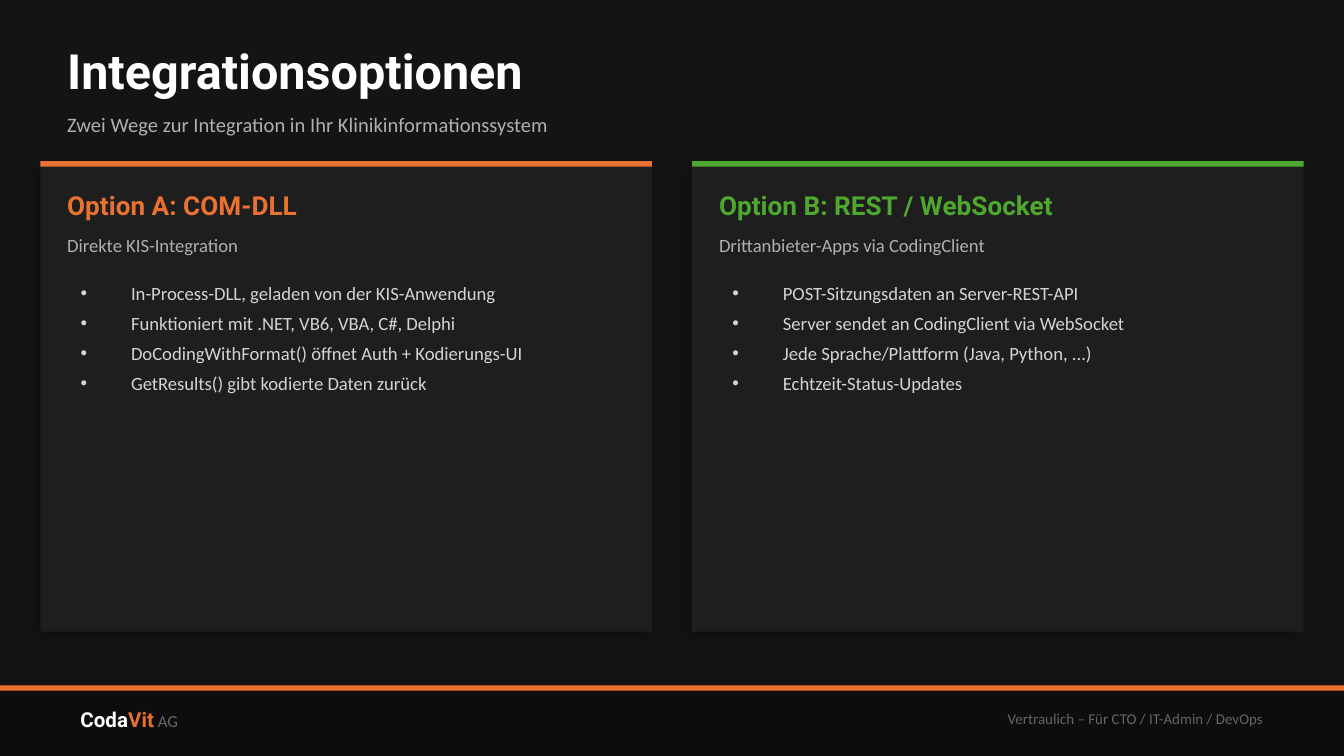
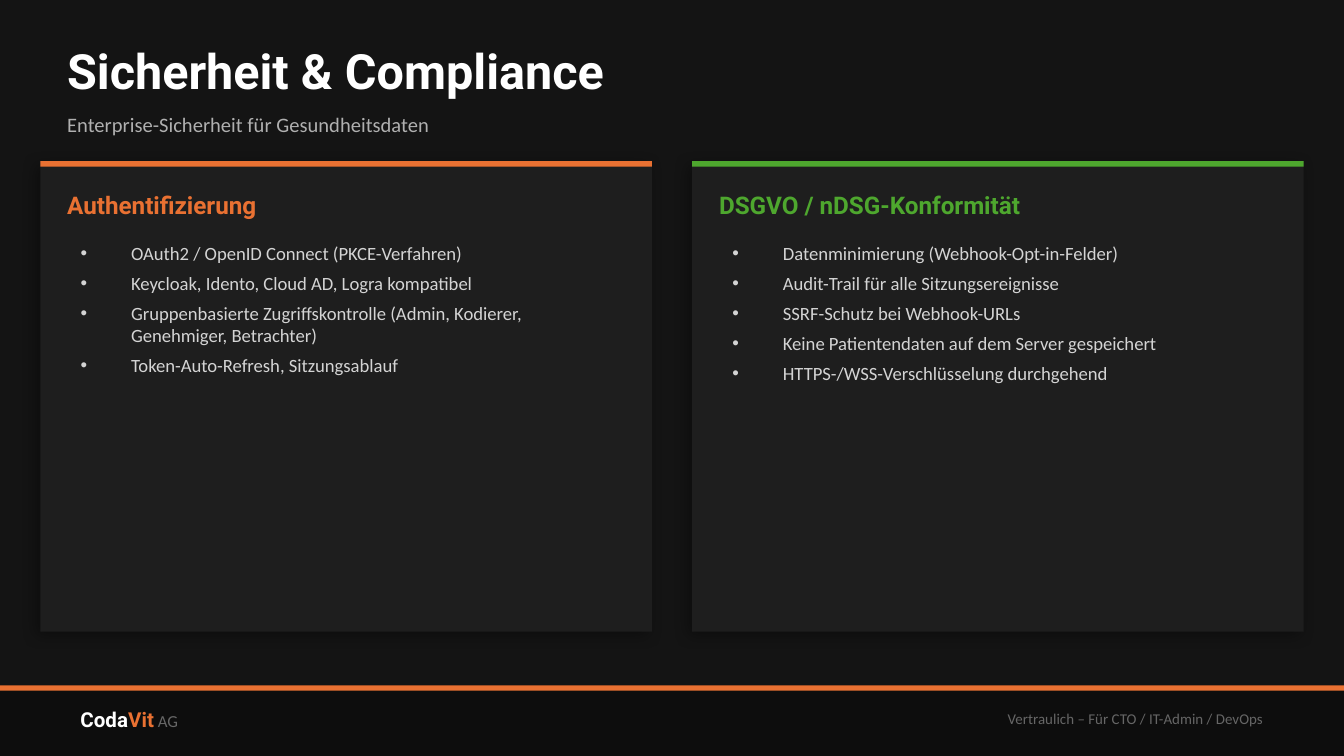
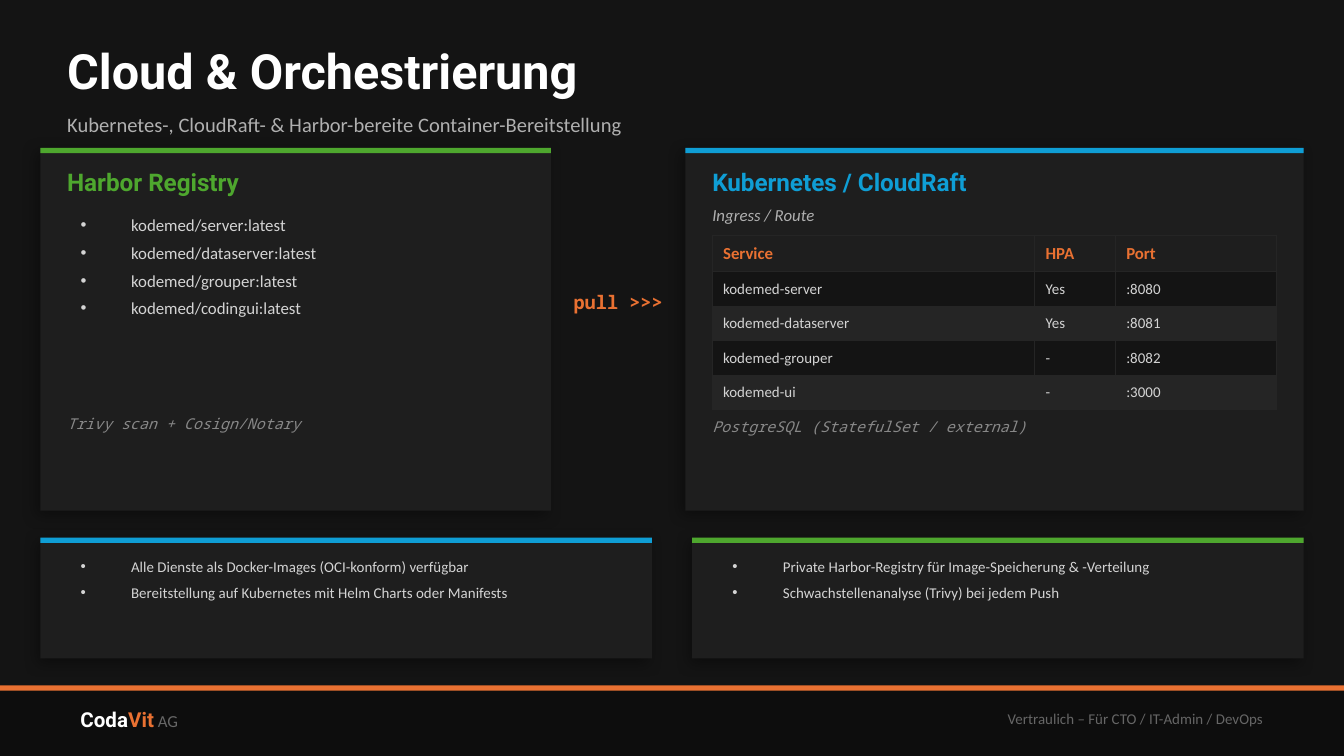
"""Build three dark slides on integration, security and cloud orchestration."""
import dataclasses

import lxml.etree
import pptx
import pptx.dml.color
import pptx.enum.shapes
import pptx.enum.text
import pptx.oxml.ns
import pptx.util

Inches = pptx.util.Inches
Pt = pptx.util.Pt
ALIGN = pptx.enum.text.PP_ALIGN
ANCHOR = pptx.enum.text.MSO_ANCHOR


@dataclasses.dataclass(frozen=True)
class Style:
    size: float
    color: str
    font: str = "Calibri"
    bold: bool = False
    italic: bool = False


class Theme:
    background, footer, card, stripe = "141414", "0D0D0D", "1E1E1E", "252525"
    orange, green, blue = "E97132", "4EA72E", "0F9ED5"
    white, text, muted, faint = "FFFFFF", "D4D4D4", "B0B0B0", "666666"
    title = Style(26, white, "Roboto", bold=True)
    subtitle = Style(11, muted)
    option = Style(14, white, "Roboto", bold=True)
    heading = Style(13, white, "Roboto", bold=True)
    note = Style(10, muted)
    small_note = Style(9, muted, italic=True)
    caption = Style(8, "888888", "Noto Sans Mono", italic=True)
    arrow = Style(10, orange, "Noto Sans Mono", bold=True)
    table_head = Style(9, orange, bold=True)
    table_body = Style(8, text)
    confidential = Style(8, faint)
    brand = Style(11, white, "Roboto", bold=True)
    brand_accent = Style(11, orange, "Roboto", bold=True)
    brand_suffix = Style(9, faint)


WIDTH = 10
HEIGHT = WIDTH * 9 / 16
MARGIN, GAP, PADDING, ACCENT_HEIGHT = 0.3, 0.3, 0.2, 0.04
HALF = (WIDTH - 2 * MARGIN - GAP) / 2
RIGHT = MARGIN + HALF + GAP
FOOTER_TOP = 5.1
INDENT = Pt(27)

BRAND = [("Coda", Theme.brand), ("Vit", Theme.brand_accent), (" AG", Theme.brand_suffix)]
CONFIDENTIAL = "Vertraulich – Für CTO / IT-Admin / DevOps"

SERVICES = [
    ("Service", "HPA", "Port"),
    ("kodemed-server", "Yes", ":8080"),
    ("kodemed-dataserver", "Yes", ":8081"),
    ("kodemed-grouper", "-", ":8082"),
    ("kodemed-ui", "-", ":3000"),
]
SERVICE_COLUMNS = (2.4, 0.6, 1.2)


def option_card(left, accent, heading, note, bullets):
    return {
        "box": (left, 1.2, HALF, 3.5), "accent": accent,
        "heading": (heading, Theme.option, 0.15, 0.35),
        "notes": [(note, Theme.note, 0.5, 0.25)],
        "bullets": (bullets, 10, 0.85, 2.5),
    }


def topic_card(left, accent, heading, bullets):
    return {
        "box": (left, 1.2, HALF, 3.5), "accent": accent,
        "heading": (heading, Theme.heading, 0.15, 0.35),
        "bullets": (bullets, 10, 0.55, 2.8),
    }


def summary_card(left, accent, bullets):
    return {"box": (left, 4, HALF, 0.9), "accent": accent, "bullets": (bullets, 8, 0.1, 0.7)}


SLIDES = [
    {
        "title": "Integrationsoptionen",
        "subtitle": "Zwei Wege zur Integration in Ihr Klinikinformationssystem",
        "cards": [
            option_card(MARGIN, Theme.orange, "Option A: COM-DLL", "Direkte KIS-Integration", [
                "In-Process-DLL, geladen von der KIS-Anwendung",
                "Funktioniert mit .NET, VB6, VBA, C#, Delphi",
                "DoCodingWithFormat() öffnet Auth + Kodierungs-UI",
                "GetResults() gibt kodierte Daten zurück",
            ]),
            option_card(RIGHT, Theme.green, "Option B: REST / WebSocket",
                        "Drittanbieter-Apps via CodingClient", [
                            "POST-Sitzungsdaten an Server-REST-API",
                            "Server sendet an CodingClient via WebSocket",
                            "Jede Sprache/Plattform (Java, Python, ...)",
                            "Echtzeit-Status-Updates",
                        ]),
        ],
    },
    {
        "title": "Sicherheit & Compliance",
        "subtitle": "Enterprise-Sicherheit für Gesundheitsdaten",
        "cards": [
            topic_card(MARGIN, Theme.orange, "Authentifizierung", [
                "OAuth2 / OpenID Connect (PKCE-Verfahren)",
                "Keycloak, Idento, Cloud AD, Logra kompatibel",
                "Gruppenbasierte Zugriffskontrolle (Admin, Kodierer, Genehmiger, Betrachter)",
                "Token-Auto-Refresh, Sitzungsablauf",
            ]),
            topic_card(RIGHT, Theme.green, "DSGVO / nDSG-Konformität", [
                "Datenminimierung (Webhook-Opt-in-Felder)",
                "Audit-Trail für alle Sitzungsereignisse",
                "SSRF-Schutz bei Webhook-URLs",
                "Keine Patientendaten auf dem Server gespeichert",
                "HTTPS-/WSS-Verschlüsselung durchgehend",
            ]),
        ],
    },
    {
        "title": "Cloud & Orchestrierung",
        "subtitle": "Kubernetes-, CloudRaft- & Harbor-bereite Container-Bereitstellung",
        "arrow": ("pull >>>", (4.15, 2.1, 0.9, 0.3)),
        "cards": [
            {
                "box": (MARGIN, 1.1, 3.8, 2.7), "accent": Theme.green,
                "heading": ("Harbor Registry", Theme.heading, 0.1, 0.3),
                "bullets": ([
                    "kodemed/server:latest",
                    "kodemed/dataserver:latest",
                    "kodemed/grouper:latest",
                    "kodemed/codingui:latest",
                ], 9, 0.45, 1.4),
                "notes": [("Trivy scan + Cosign/Notary", Theme.caption, 1.9, 0.3)],
            },
            {
                "box": (5.1, 1.1, 4.6, 2.7), "accent": Theme.blue,
                "heading": ("Kubernetes / CloudRaft", Theme.heading, 0.1, 0.3),
                "notes": [
                    ("Ingress / Route", Theme.small_note, 0.4, 0.2),
                    ("PostgreSQL (StatefulSet / external)", Theme.caption, 1.95, 0.25),
                ],
                "table": (SERVICES, SERVICE_COLUMNS, 0.65, 1),
            },
            summary_card(MARGIN, Theme.blue, [
                "Alle Dienste als Docker-Images (OCI-konform) verfügbar",
                "Bereitstellung auf Kubernetes mit Helm Charts oder Manifests",
            ]),
            summary_card(RIGHT, Theme.green, [
                "Private Harbor-Registry für Image-Speicherung & -Verteilung",
                "Schwachstellenanalyse (Trivy) bei jedem Push",
            ]),
        ],
    },
]


def rgb(color):
    return pptx.dml.color.RGBColor.from_string(color)


def add_element(parent, tag, **attributes):
    return lxml.etree.SubElement(parent, pptx.oxml.ns.qn(tag), attributes)


def add_run(paragraph, text, style):
    run = paragraph.add_run()
    run.text = text
    run.font.name = style.font
    run.font.size = Pt(style.size)
    run.font.bold = style.bold
    run.font.italic = style.italic
    run.font.color.rgb = rgb(style.color)


def place(shape, box):
    shape.left, shape.top, shape.width, shape.height = (Inches(value) for value in box)


def set_frame(shape, anchor, horizontal=0, vertical=0):
    frame = shape.text_frame
    frame.word_wrap = True
    frame.auto_size = pptx.enum.text.MSO_AUTO_SIZE.NONE
    frame.vertical_anchor = anchor
    frame.margin_left = frame.margin_right = Inches(horizontal)
    frame.margin_top = frame.margin_bottom = Inches(vertical)
    return frame


def add_text(slide, box, runs, align=ALIGN.LEFT, insets=(0, 0)):
    shape = slide.shapes.add_textbox(*(Inches(value) for value in box))
    paragraph = set_frame(shape, ANCHOR.MIDDLE, *insets).paragraphs[0]
    paragraph.alignment = align
    for text, style in runs:
        add_run(paragraph, text, style)


def add_rectangle(slide, box, color):
    shape = slide.shapes.add_shape(
        pptx.enum.shapes.MSO_SHAPE.RECTANGLE, *(Inches(value) for value in box))
    shape.shadow.inherit = False
    shape.fill.solid()
    shape.fill.fore_color.rgb = rgb(color)
    shape.line.fill.background()
    return shape


def add_shadow(shape):
    effects = shape.element.spPr.find(pptx.oxml.ns.qn("a:effectLst"))
    shadow = add_element(effects, "a:outerShdw", blurRad=str(Pt(8)), dist=str(Pt(3)),
                         dir=str(135 * 60000), algn="bl", rotWithShape="0")
    color = add_element(shadow, "a:srgbClr", val="000000")
    add_element(color, "a:alpha", val="35000")


def fill_title(slide, text):
    title = slide.shapes.title
    title.element.getparent().append(title.element)
    place(title, (0.5, 0.25, 9, 0.55))
    paragraph = set_frame(title, ANCHOR.MIDDLE).paragraphs[0]
    paragraph.alignment = ALIGN.LEFT
    add_run(paragraph, text, Theme.title)


def fill_bullets(placeholder, box, lines, size):
    placeholder.element.getparent().append(placeholder.element)
    place(placeholder, box)
    frame = set_frame(placeholder, ANCHOR.TOP, 0.1, 0.05)
    for index, line in enumerate(lines):
        paragraph = frame.add_paragraph() if index else frame.paragraphs[0]
        paragraph.alignment = ALIGN.LEFT
        paragraph.space_before = Pt(0)
        paragraph.space_after = Pt(4)
        properties = paragraph._p.get_or_add_pPr()
        properties.set("marL", str(INDENT))
        properties.set("indent", str(-INDENT))
        add_element(properties, "a:buChar", char="•")
        add_run(paragraph, line, Style(size, Theme.text))


def set_borders(cell, color, width):
    properties = cell._tc.get_or_add_tcPr()
    for index, side in enumerate(("a:lnL", "a:lnR", "a:lnT", "a:lnB")):
        line = lxml.etree.Element(pptx.oxml.ns.qn(side), w=str(Pt(width)))
        fill = add_element(line, "a:solidFill")
        add_element(fill, "a:srgbClr", val=color)
        properties.insert(index, line)


def add_table(slide, box, rows, widths):
    left, top, width, height = (Inches(value) for value in box)
    graphic_frame = slide.shapes.add_table(len(rows), len(widths), left, top, width, 0)
    table = graphic_frame.table
    table.first_row = table.horz_banding = False
    for column, column_width in zip(table.columns, widths):
        column.width = Inches(column_width)
    graphic_frame.height = height
    for row_index, row in enumerate(rows):
        style = Theme.table_body if row_index else Theme.table_head
        stripe = Theme.background if row_index % 2 else Theme.stripe
        for column_index, text in enumerate(row):
            cell = table.cell(row_index, column_index)
            cell.fill.solid()
            cell.fill.fore_color.rgb = rgb(stripe if row_index else Theme.card)
            cell.vertical_anchor = ANCHOR.MIDDLE
            cell.margin_left = cell.margin_right = Inches(0.08)
            cell.margin_top = cell.margin_bottom = Inches(0.06)
            add_run(cell.text_frame.paragraphs[0], text, style)
            set_borders(cell, Theme.stripe, 0.5)


def add_footer(slide):
    add_rectangle(slide, (0, FOOTER_TOP, WIDTH, HEIGHT - FOOTER_TOP), Theme.footer)
    add_rectangle(slide, (0, FOOTER_TOP, WIDTH, ACCENT_HEIGHT), Theme.orange)
    insets = (0.1, 0.05)
    add_text(slide, (0.5, 5.15, 3, 0.4), BRAND, insets=insets)
    add_text(slide, (5.5, 5.15, 4, 0.4), [(CONFIDENTIAL, Theme.confidential)],
             ALIGN.RIGHT, insets)


def add_card(slide, card, placeholders):
    left, top, width, height = card["box"]
    inner_left, inner_width = left + PADDING, width - 2 * PADDING
    add_shadow(add_rectangle(slide, card["box"], Theme.card))
    add_rectangle(slide, (left, top, width, ACCENT_HEIGHT), card["accent"])
    texts = list(card.get("notes", []))
    if "heading" in card:
        heading, style, offset, text_height = card["heading"]
        style = dataclasses.replace(style, color=card["accent"])
        texts.insert(0, (heading, style, offset, text_height))
    for text, style, offset, text_height in texts:
        add_text(slide, (inner_left, top + offset, inner_width, text_height), [(text, style)])
    if "bullets" in card:
        lines, size, offset, list_height = card["bullets"]
        box = (inner_left, top + offset, inner_width, list_height)
        fill_bullets(placeholders.pop(0), box, lines, size)
    if "table" in card:
        rows, widths, offset, table_height = card["table"]
        add_table(slide, (inner_left, top + offset, inner_width, table_height), rows, widths)


def add_slide(presentation, content):
    layout_name = "Two Content" if len(content["cards"]) == 2 else "Comparison"
    slide = presentation.slides.add_slide(presentation.slide_layouts.get_by_name(layout_name))
    placeholders = list(slide.placeholders)[1:]
    add_footer(slide)
    fill_title(slide, content["title"])
    add_text(slide, (0.5, 0.75, 9, 0.35), [(content["subtitle"], Theme.subtitle)])
    for card in content["cards"]:
        add_card(slide, card, placeholders)
    if "arrow" in content:
        text, box = content["arrow"]
        add_text(slide, box, [(text, Theme.arrow)], ALIGN.CENTER)
    for placeholder in placeholders:
        placeholder.element.getparent().remove(placeholder.element)


def main():
    presentation = pptx.Presentation()
    presentation.slide_width = Inches(WIDTH)
    presentation.slide_height = Inches(HEIGHT)
    background = presentation.slide_master.background.fill
    background.solid()
    background.fore_color.rgb = rgb(Theme.background)
    for content in SLIDES:
        add_slide(presentation, content)
    presentation.save("out.pptx")


if __name__ == "__main__":
    main()
